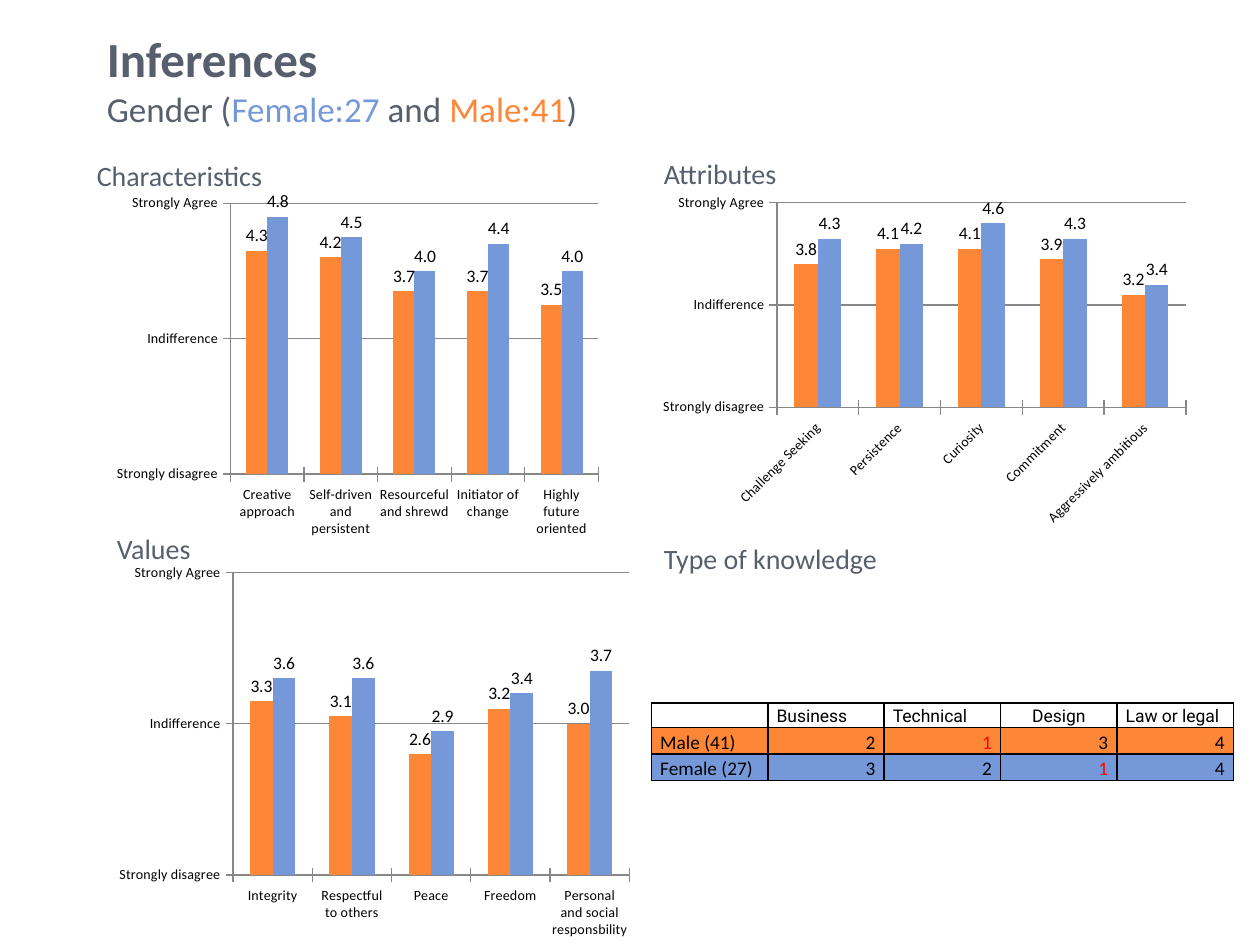
from lxml import etree
from pptx import Presentation
from pptx.chart.data import CategoryChartData
from pptx.dml.color import RGBColor
from pptx.enum.chart import XL_CHART_TYPE, XL_LABEL_POSITION, XL_TICK_MARK
from pptx.enum.text import MSO_ANCHOR, PP_ALIGN
from pptx.oxml import parse_xml
from pptx.oxml.ns import nsdecls, qn
from pptx.util import Inches, Pt

COLUMN = XL_CHART_TYPE.COLUMN_CLUSTERED
OUTSIDE = XL_LABEL_POSITION.OUTSIDE_END
CROSS = XL_TICK_MARK.CROSS
MIDDLE, BOTTOM, TOP = MSO_ANCHOR.MIDDLE, MSO_ANCHOR.BOTTOM, MSO_ANCHOR.TOP
LEFT, CENTER, RIGHT = PP_ALIGN.LEFT, PP_ALIGN.CENTER, PP_ALIGN.RIGHT

SLATE = RGBColor(0x57, 0x5F, 0x6D)
BLUE = RGBColor(0x75, 0x98, 0xD9)
ORANGE = RGBColor(0xFE, 0x86, 0x37)
BLACK = RGBColor(0, 0, 0)
RED = RGBColor(0xFF, 0, 0)
GRAY = RGBColor(0x87, 0x87, 0x87)

SCALE = r'[=1]\ "Strongly disagree";[=3]\ \ "Indifference";"Strongly Agree"'


def set_font(font, size, color, name="Calibri", bold=False):
    font.size, font.name, font.bold = Pt(size), name, bold
    font.color.rgb = color


class Page:
    font = "Calibri"

    def __init__(self, slide):
        self.slide = slide
        self.shapes = slide.shapes

    def frame(self, x, y, w, h, anchor=TOP):
        box = self.shapes.add_textbox(Inches(x), Inches(y), Inches(w), Inches(h))
        box.text_frame.word_wrap = True
        box.text_frame.vertical_anchor = anchor
        return box.text_frame

    def title(self, head, parts):
        para = self.frame(0.75, 0.17, 9, 0.92, MIDDLE).paragraphs[0]
        run = para.add_run()
        run.text = head
        set_font(run.font, 28, SLATE, bold=True)
        para.add_line_break()
        for text, color in parts:
            run = para.add_run()
            run.text = text
            set_font(run.font, 20, color)

    def heading(self, text, x, y, w):
        para = self.frame(x, y, w, 0.37).paragraphs[0]
        para.text = text
        set_font(para.font, 16, SLATE)

    def layout(self, chart, area):
        """Place the inner plot area by fractions of the chart: x, y, w, h."""
        plot = chart._chartSpace.chart.plotArea
        for old in plot.findall(qn("c:layout")):
            plot.remove(old)
        sizes = "".join(f'<c:{k} val="{v}"/>' for k, v in zip("xywh", area))
        plot.insert(0, parse_xml(
            f'<c:layout {nsdecls("c")}><c:manualLayout>'
            '<c:layoutTarget val="inner"/><c:xMode val="edge"/>'
            f'<c:yMode val="edge"/>{sizes}</c:manualLayout></c:layout>'))

    def chart(self, place, area, names, male, female, turn=0):
        data = CategoryChartData(number_format="#,##0.0")
        data.categories = names
        data.add_series("Series 1", male)
        data.add_series("Series 2", female)
        spot = [Inches(v) for v in place]
        chart = self.shapes.add_chart(COLUMN, *spot, data).chart
        chart.has_legend = chart.has_title = False
        set_font(chart.font, 10, BLACK)
        self.layout(chart, area)

        cats, vals = chart.category_axis, chart.value_axis
        for axis in (cats, vals):
            axis.major_tick_mark = CROSS
            set_font(axis.tick_labels.font, 8, BLACK)
            axis.format.line.color.rgb = GRAY
        if turn:
            body = cats._element.find(qn("c:txPr")).find(qn("a:bodyPr"))
            body.set("rot", str(turn * 60000))
        vals.minimum_scale, vals.maximum_scale, vals.major_unit = 1, 5, 2
        vals.major_gridlines.format.line.color.rgb = GRAY
        vals.tick_labels.number_format = SCALE
        vals.tick_labels.number_format_is_linked = False

        plot = chart.plots[0]
        plot.gap_width, plot.overlap = 150, 0
        plot.vary_by_categories = False
        for series, color in zip(plot.series, (ORANGE, BLUE)):
            series.format.fill.solid()
            series.format.fill.fore_color.rgb = color
            labels = series.data_labels
            labels.show_value = True
            labels.position = OUTSIDE
            labels.number_format = "#,##0.0"
            labels.number_format_is_linked = False
            set_font(labels.font, 10, BLACK)

    def border(self, cell):
        props = cell._tc.get_or_add_tcPr()
        for i, side in enumerate(("lnL", "lnR", "lnT", "lnB")):
            line = etree.Element(qn(f"a:{side}"), w=str(Pt(1)))
            fill = etree.SubElement(line, qn("a:solidFill"))
            etree.SubElement(fill, qn("a:srgbClr"), val=str(BLACK))
            props.insert(i, line)

    def cell(self, cell, text, fill, font, size, color, align, anchor):
        cell.margin_left = cell.margin_right = Inches(0.07)
        cell.margin_top = cell.margin_bottom = 0
        cell.vertical_anchor = anchor
        if fill is None:
            cell.fill.background()
        else:
            cell.fill.solid()
            cell.fill.fore_color.rgb = fill
        para = cell.text_frame.paragraphs[0]
        para.text = text
        para.alignment, para.line_spacing = align, 1.15
        set_font(para.font, size, color, font)
        self.border(cell)

    def table(self, x, y, w, heights, rows, fills):
        grid = self.shapes.add_table(
            len(rows), len(rows[0]), Inches(x), Inches(y),
            Inches(w), Inches(sum(heights))).table
        grid.first_row = grid.horz_banding = False
        for r, (row, fill) in enumerate(zip(rows, fills)):
            grid.rows[r].height = Inches(heights[r])
            font, size = (self.font, 11) if r else ("Roboto", 10)
            for c, text in enumerate(row):
                number = text.isdigit()
                align = RIGHT if number else CENTER if text == "Design" else LEFT
                self.cell(grid.cell(r, c), text, fill, font, size,
                          RED if text == "1" else BLACK, align,
                          BOTTOM if number else TOP)


def main():
    deck = Presentation()
    deck.slide_width, deck.slide_height = Inches(10), Inches(7.5)
    page = Page(deck.slides.add_slide(deck.slide_layouts[6]))

    page.title("Inferences", [
        ("Gender (", SLATE), ("Female:27", BLUE), (" and ", SLATE),
        ("Male:41", ORANGE), (")", SLATE)])

    page.chart((0.83, 1.5, 4, 2.83), (0.25, 0.04, 0.73, 0.76),
               ["Creative approach", "Self-driven and persistent",
                "Resourceful and shrewd", "Initiator of change",
                "Highly future oriented"],
               [4.3, 4.2, 3.7, 3.7, 3.5], [4.8, 4.5, 4, 4.4, 4])
    page.chart((5.17, 1.5, 4.33, 2.75), (0.23, 0.04, 0.75, 0.59),
               ["Challenge Seeking", "Persistence", "Curiosity", "Commitment",
                "Aggressively ambitious"],
               [3.8, 4.1, 4.1, 3.9, 3.2], [4.3, 4.2, 4.6, 4.3, 3.4], turn=-45)
    page.chart((0.83, 4.42, 4.25, 3.08), (0.24, 0.04, 0.74, 0.78),
               ["Integrity", "Respectful to others", "Peace", "Freedom",
                "Personal and social responsbility"],
               [3.3, 3.1, 2.6, 3.2, 3], [3.6, 3.6, 2.9, 3.4, 3.7])

    page.table(5.17, 5.58, 4.62, (0.19, 0.21, 0.21), [
        ["", "Business", "Technical", "Design", "Law or legal"],
        ["Male (41)", "2", "1", "3", "4"],
        ["Female (27)", "3", "2", "1", "4"]], (None, ORANGE, BLUE))

    for text, x, y, w in [("Characteristics", 0.67, 1.21, 2.75),
                          ("Attributes", 5.17, 1.19, 2.75),
                          ("Values", 0.83, 4.17, 1.92),
                          ("Type of knowledge", 5.17, 4.25, 2.08)]:
        page.heading(text, x, y, w)

    deck.save("out.pptx")


if __name__ == "__main__":
    main()
